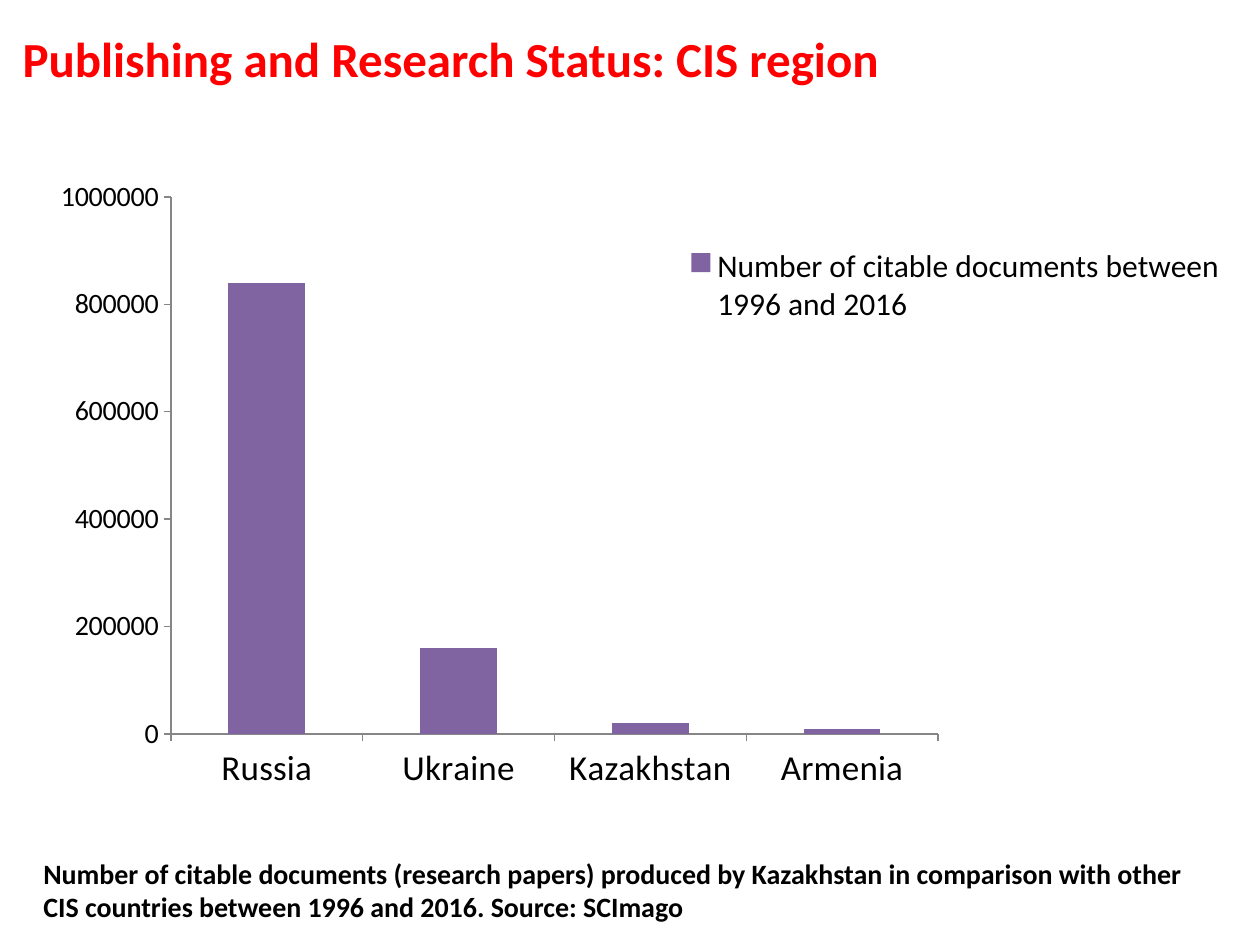
from dataclasses import dataclass
from pptx import Presentation
from pptx import util as u
from pptx.chart import data as cd
from pptx.dml.color import RGBColor
from pptx.enum import chart as ce, text as te
from pptx.oxml import parse_xml
from pptx.oxml.ns import nsdecls

SCALE = 914400 / 126


@dataclass(frozen=True)
class Theme:
    face: str = "Calibri"
    red: str = "FF0000"
    ink: str = "000000"
    bar: str = "8064A2"
    axis: str = "868686"
    title: int = 28
    cats: int = 20
    key: int = 18
    small: int = 16


T = Theme()


def px(n):
    return u.Emu(round(n * SCALE))


def style(font, size, color=T.ink, bold=False):
    font.name, font.size, font.bold = T.face, u.Pt(size), bold
    font.color.rgb = RGBColor.from_string(color)


def place(shape, box):
    shape.left, shape.top, shape.width, shape.height = map(px, box)


def layout(box, frame, inner=False):
    """Manual chart layout for a box relative to the chart frame, in px."""
    parts = zip("xywh", box, (frame[2], frame[3]) * 2)
    target = '<c:layoutTarget val="inner"/>' if inner else ""
    modes = "".join(f'<c:{k}Mode val="edge"/>' for k in "xy")
    sizes = "".join(f'<c:{k} val="{n / full:.4f}"/>' for k, n, full in parts)
    return parse_xml(f'<c:layout {nsdecls("c")}><c:manualLayout>{target}'
                     f'{modes}{sizes}</c:manualLayout></c:layout>')


def add_title(slide, box):
    title = slide.shapes.title
    place(title, box)
    frame = title.text_frame
    frame.text = "Publishing and Research Status: CIS region"
    frame.vertical_anchor = te.MSO_ANCHOR.MIDDLE
    para = frame.paragraphs[0]
    para.alignment = te.PP_ALIGN.LEFT
    style(para.runs[0].font, T.title, T.red, True)


def add_bars(slide, box):
    data = cd.CategoryChartData()
    data.categories = ["Russia", "Ukraine", "Kazakhstan", "Armenia"]
    data.add_series("Number of citable documents between 1996 and 2016",
                    [840000, 160000, 20000, 10000])
    chart = slide.shapes.add_chart(ce.XL_CHART_TYPE.COLUMN_CLUSTERED,
                                   *map(px, box), data).chart
    chart.has_title = False
    style(chart.font, 10)

    plot = chart.plots[0]
    plot.gap_width, plot.vary_by_categories = 150, False
    fill = plot.series[0].format.fill
    fill.solid()
    fill.fore_color.rgb = RGBColor.from_string(T.bar)

    for axis, size in ((chart.category_axis, T.cats),
                       (chart.value_axis, T.small)):
        style(axis.tick_labels.font, size)
        axis.has_major_gridlines = False
        axis.major_tick_mark = ce.XL_TICK_MARK.OUTSIDE
        axis.format.line.color.rgb = RGBColor.from_string(T.axis)
        axis.format.line.width = u.Pt(0.75)
    scale = chart.value_axis
    scale.minimum_scale, scale.maximum_scale = 0, 1000000
    scale.major_unit = 200000
    scale.tick_labels.number_format = "General"
    scale.tick_labels.number_format_is_linked = False

    chart.has_legend = True
    key = chart.legend
    key.position = ce.XL_LEGEND_POSITION.RIGHT
    key.include_in_layout = False
    style(key.font, T.key)

    area = plot._element.getparent()
    for old in area.findall("{*}layout"):
        area.remove(old)
    area.insert(0, layout((140, 29, 767, 537), box, True))
    for old in key._element.findall("{*}layout"):
        key._element.remove(old)
    spot = key._element.find("{*}legendPos")
    spot.addnext(layout((652, 74, 545, 86), box))


def add_note(slide, box):
    frame = slide.shapes.add_textbox(*map(px, box)).text_frame
    frame.word_wrap = True
    frame.auto_size = te.MSO_AUTO_SIZE.SHAPE_TO_FIT_TEXT
    frame.text = ("Number of citable documents (research papers) produced by "
                  "Kazakhstan in comparison with other CIS countries between "
                  "1996 and 2016. Source: SCImago")
    style(frame.paragraphs[0].runs[0].font, T.small, bold=True)


def main():
    deck = Presentation()
    deck.slide_width, deck.slide_height = px(1260), px(945)
    slide = deck.slides.add_slide(deck.slide_layouts[5])
    add_bars(slide, (31, 168, 1497, 635))
    add_title(slide, (10, -21, 1134, 158))
    add_note(slide, (31, 850, 1197, 81))
    deck.save("out.pptx")


if __name__ == "__main__":
    main()
